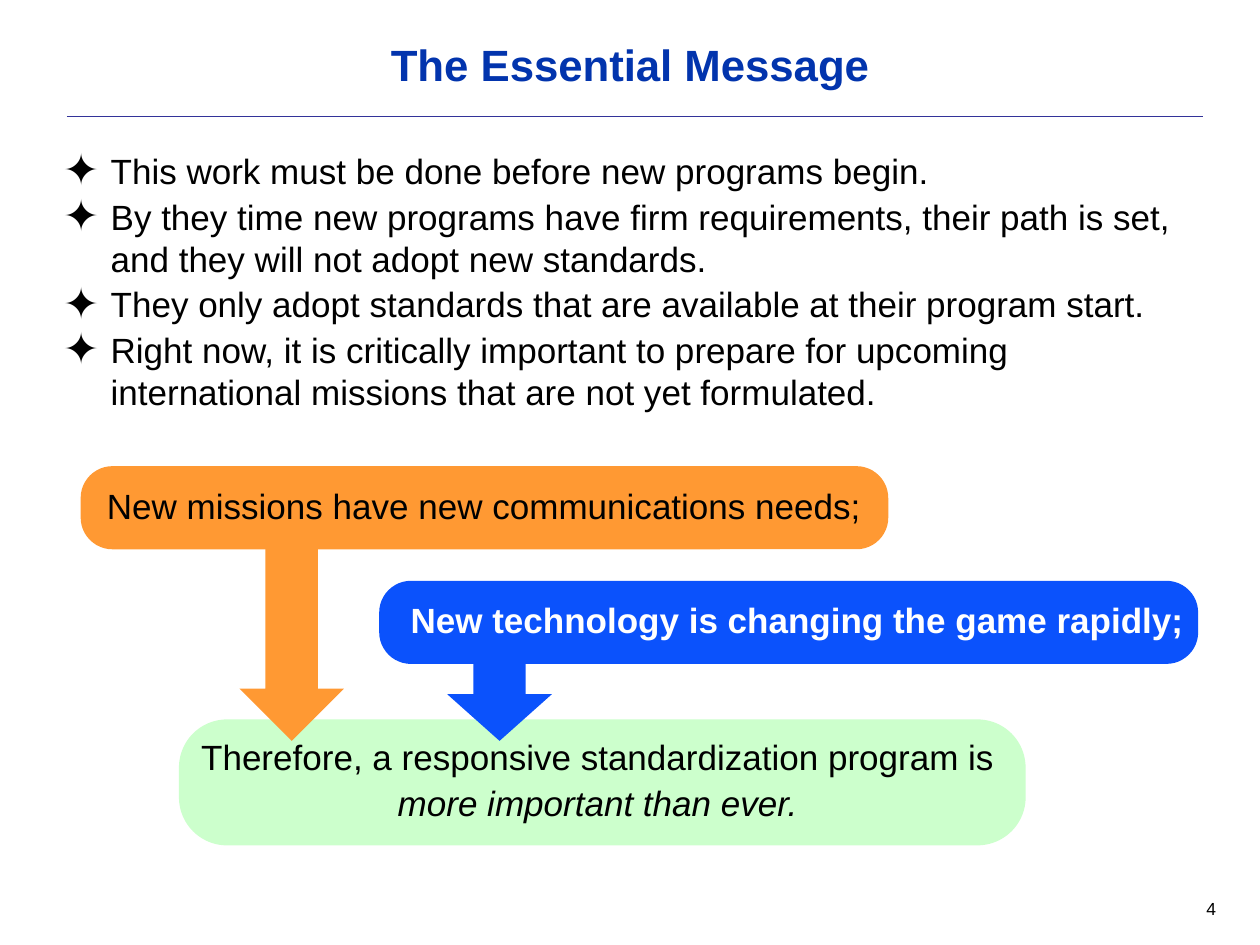
from lxml import etree
from pptx import Presentation
from pptx.dml.color import RGBColor
from pptx.enum.shapes import MSO_CONNECTOR as Connector, MSO_SHAPE as Preset
from pptx.enum.text import MSO_ANCHOR as Anchor, PP_ALIGN as Align
from pptx.oxml.ns import qn
from pptx.util import Inches, Pt

# Content
TITLE = "The Essential Message"
BULLETS = [
    "This work must be done before new programs begin.",
    "By they time new programs have firm requirements, their path is set, "
    "and they will not adopt new standards.",
    "They only adopt standards that are available at their program start.",
    "Right now, it is critically important to prepare for upcoming "
    "international missions that are not yet formulated.",
]
MISSIONS = "New missions have new communications needs;"
TECHNOLOGY = "New technology is changing the game rapidly;"
CONCLUSION = ["Therefore, a responsive standardization program is",
              "more important than ever."]
PAGE_NUMBER = "4"

THEME = {
    "font": "Arial",
    "title": "0234AD", "text": "000000", "light": "FFFFFF", "rule": "333399",
    "missions": "FF9933", "technology": "0B52FC", "conclusion": "CCFFCC",
    "title_size": 25, "body_size": 20, "number_size": 10,
}

# Places: left, top, width, height
PANELS = [
    ("conclusion", (1.42, 5.71, 6.72, 1)),
    ("technology", (3.01, 4.61, 6.5, 0.66)),
    ("missions", (0.64, 3.7, 6.41, 0.66)),
]
ARROW_WIDTH, ARROW_TIP = 0.83, 5.88
ARROWS = [("missions", 1.9, 4.23), ("technology", 3.55, 5.14)]  # left, top
CORNER = 0.382
HANGING = 0.38

BODY = {"size": THEME["body_size"], "space_after": 2}
TEXTS = [
    ([TITLE], (0.5, 0.3, 9, 0.62),
     {"size": THEME["title_size"], "color": "title", "bold": True,
      "alignment": Align.CENTER, "line_spacing": 0.9}),
    (BULLETS, (0.4, 1.14, 9.19, 1.85), {**BODY, "bullet": "✦"}),
    ([PAGE_NUMBER], (7.42, 7.08, 2.33, 0.25),
     {"size": THEME["number_size"], "alignment": Align.RIGHT}),
    ([MISSIONS], (0.75, 3.8, 6.3, 0.43), BODY),
    ([TECHNOLOGY], (3.16, 4.7, 6.35, 0.57),
     {**BODY, "color": "light", "bold": True}),
    (CONCLUSION, (0.93, 5.79, 7.63, 0.96),
     {**BODY, "alignment": Align.CENTER, "italic_last": True}),
]


def color(name):
    return RGBColor.from_string(THEME[name])


def add_filled(slide, preset, place, fill):
    shape = slide.shapes.add_shape(preset, *map(Inches, place))
    shape.shadow.inherit = False
    shape.fill.solid()
    shape.fill.fore_color.rgb = color(fill)
    shape.line.fill.background()
    return shape


def add_bullet(paragraph, character):
    properties = paragraph._p.get_or_add_pPr()
    properties.set("marL", str(Inches(HANGING)))
    properties.set("indent", str(-Inches(HANGING)))
    for tag, name, value in (("a:buSzPct", "val", "125000"),
                             ("a:buFont", "typeface", THEME["font"]),
                             ("a:buChar", "char", character)):
        etree.SubElement(properties, qn(tag)).set(name, value)


def add_text(slide, lines, place, style):
    frame = slide.shapes.add_textbox(*map(Inches, place)).text_frame
    frame.word_wrap = True
    frame.vertical_anchor = Anchor.TOP
    for index, line in enumerate(lines):
        paragraph = frame.add_paragraph() if index else frame.paragraphs[0]
        if "bullet" in style:
            add_bullet(paragraph, style["bullet"])
        run = paragraph.add_run()
        run.text = line
        last = index == len(lines) - 1
        paragraph_format = {
            "alignment": style.get("alignment", Align.LEFT),
            "line_spacing": style.get("line_spacing", 1.0),
            "space_after": Pt(style.get("space_after", 0)),
        }
        font_format = {
            "name": THEME["font"],
            "size": Pt(style["size"]),
            "bold": style.get("bold", False),
            "italic": last and style.get("italic_last", False),
        }
        for target, values in ((paragraph, paragraph_format),
                               (run.font, font_format)):
            for name, value in values.items():
                setattr(target, name, value)
        run.font.color.rgb = color(style.get("color", "text"))


def main():
    presentation = Presentation()
    presentation.slide_width, presentation.slide_height = Inches(10), Inches(7.5)
    slide = presentation.slides.add_slide(presentation.slide_layouts[6])

    # Rule under the title
    rule = slide.shapes.add_connector(
        Connector.STRAIGHT, *map(Inches, (0.53, 0.92, 9.55, 0.92)))
    rule.line.color.rgb = color("rule")
    rule.line.width = Pt(0.13)
    etree.SubElement(rule._element.spPr, qn("a:effectLst"))

    # Rounded panels
    for fill, place in PANELS:
        panel = add_filled(slide, Preset.ROUNDED_RECTANGLE, place, fill)
        panel.adjustments[0] = CORNER

    # Text
    for lines, place, style in TEXTS:
        add_text(slide, lines, place, style)

    # Arrows down to the conclusion
    for fill, left, top in ARROWS:
        place = (left, top, ARROW_WIDTH, ARROW_TIP - top)
        add_filled(slide, Preset.DOWN_ARROW, place, fill)

    presentation.save("out.pptx")


if __name__ == "__main__":
    main()
